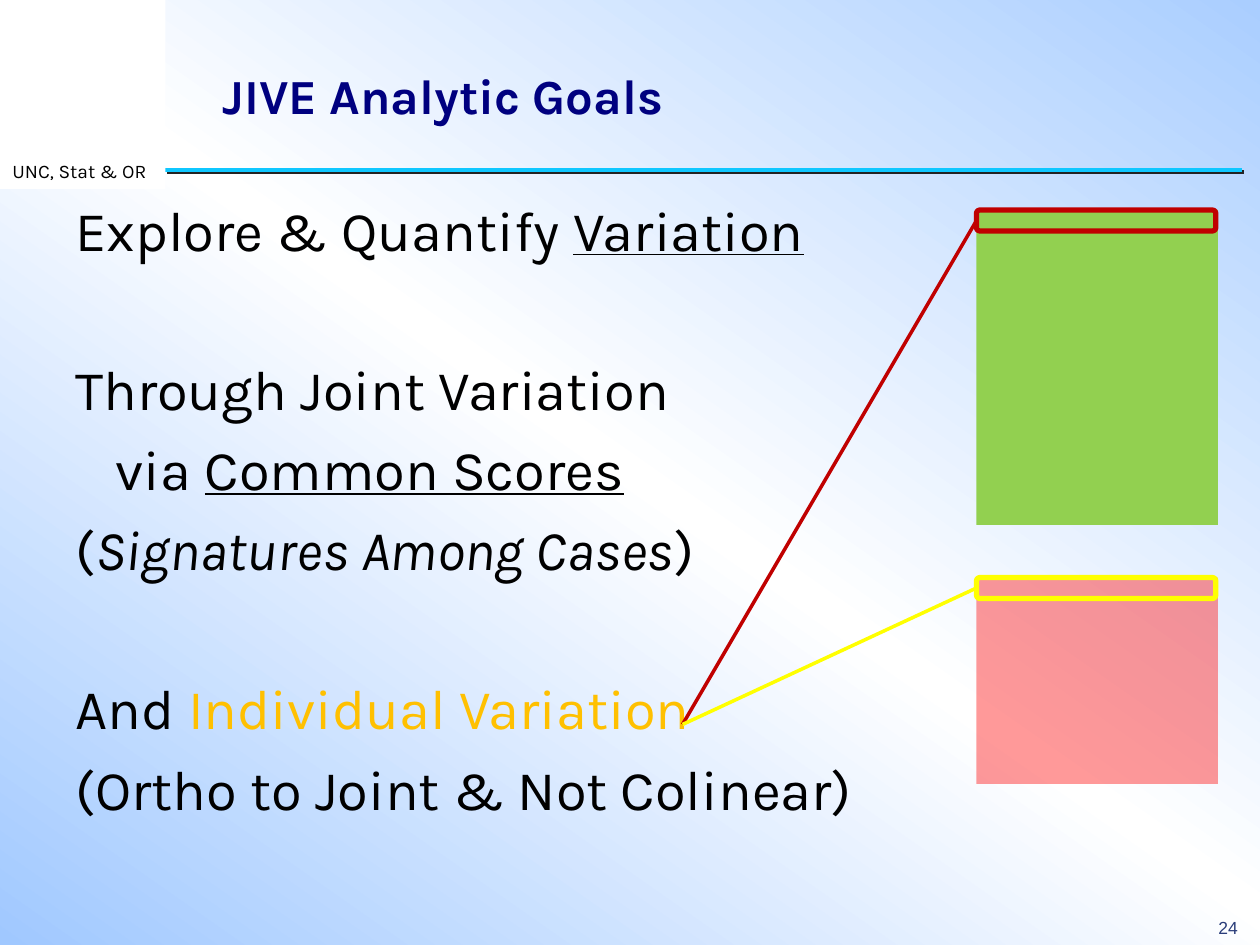
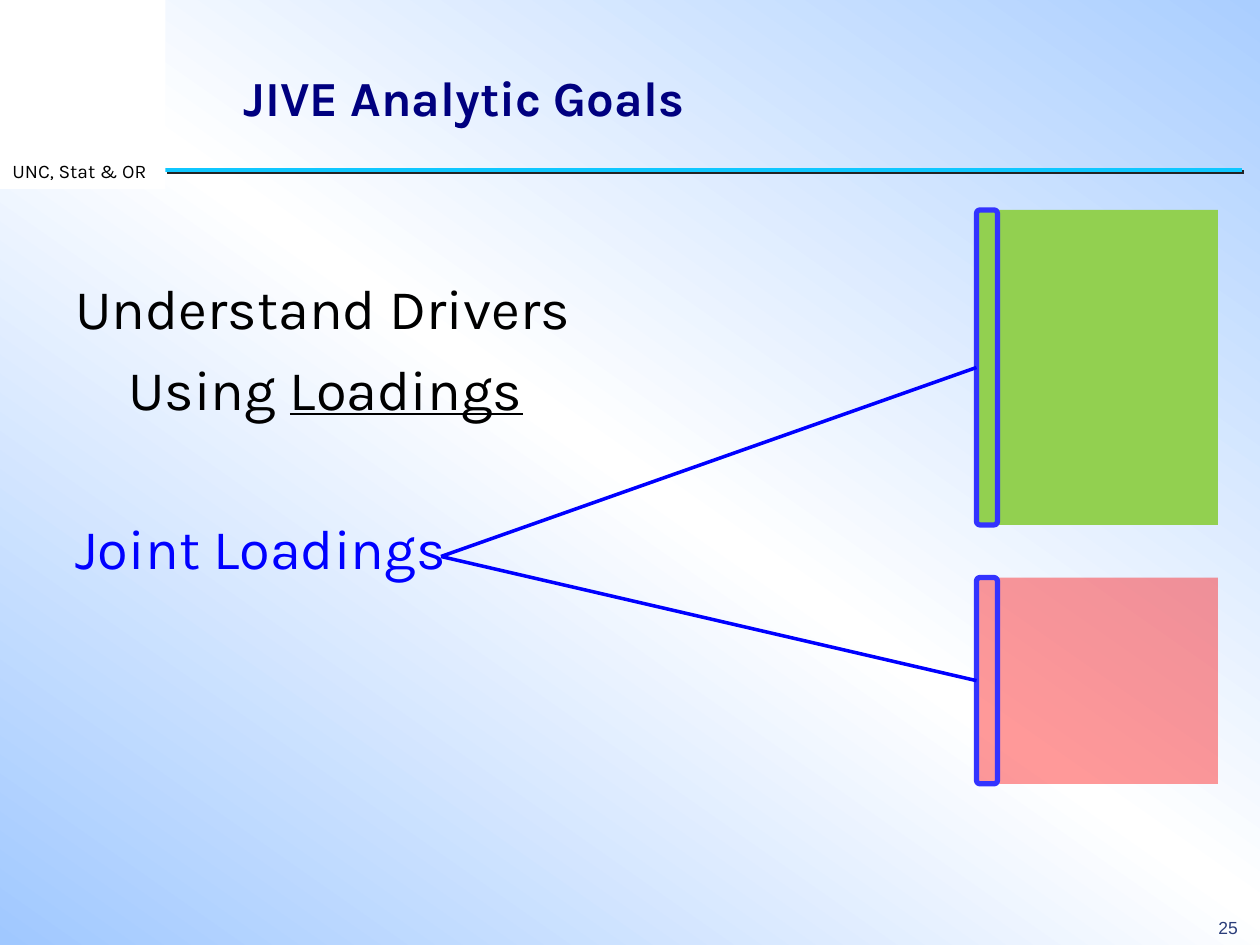
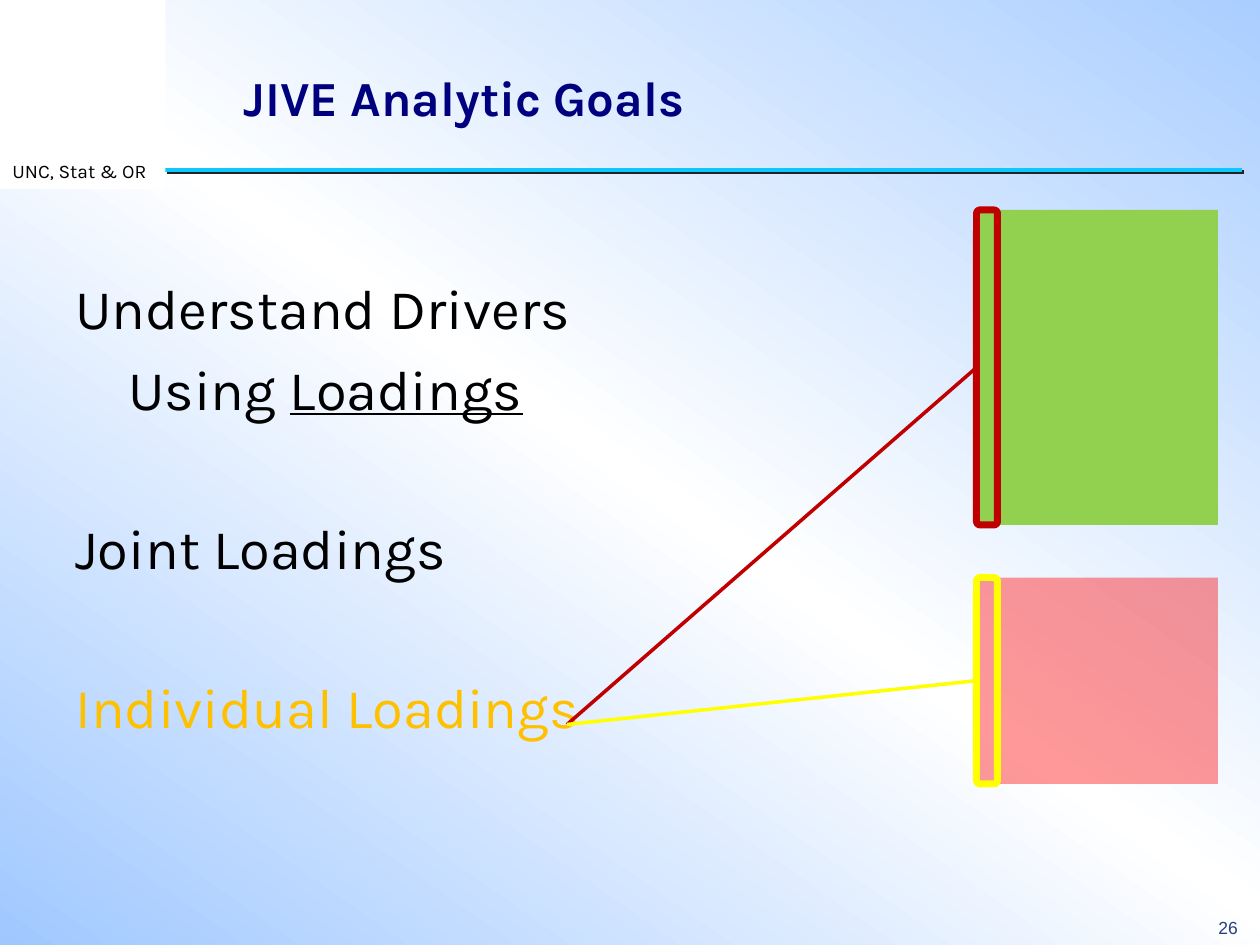
from dataclasses import dataclass

import pptx
import pptx.dml.color
import pptx.enum.shapes
import pptx.enum.text
import pptx.oxml
import pptx.oxml.ns
import pptx.util

RGB = pptx.dml.color.RGBColor
qn = pptx.oxml.ns.qn
SHAPE = pptx.enum.shapes.MSO_SHAPE
ANCHOR = pptx.enum.text.MSO_ANCHOR
ALIGN = pptx.enum.text.PP_ALIGN

BLACK = RGB(0x00, 0x00, 0x00)
WHITE = RGB(0xFF, 0xFF, 0xFF)
NAVY = RGB(0x00, 0x00, 0x7F)
PAGE_BLUE = RGB(0x2A, 0x3D, 0x7A)
RULE_BLUE = RGB(0x0F, 0xC7, 0xFF)
RULE_SHADOW = RGB(0x23, 0x23, 0x23)
GREEN = RGB(0x92, 0xD0, 0x50)
RED = RGB(0xFF, 0x00, 0x00)
DARK_RED = RGB(0xC0, 0x00, 0x00)
YELLOW = RGB(0xFF, 0xFF, 0x00)
AMBER = RGB(0xFF, 0xC0, 0x00)
BLUE = RGB(0x00, 0x00, 0xFF)
TAB_BLUE = RGB(0x33, 0x33, 0xFF)
SKY = RGB(0xA0, 0xC8, 0xFF)
SKY_LIGHT = RGB(0xAA, 0xCE, 0xFF)
BACKGROUND_STOPS = [(0, SKY_LIGHT), (50, WHITE), (100, SKY)]

# The slide is a grid of 120 columns and 90 rows.
COLUMNS, ROWS = 120, 90
SLIDE_WIDTH, SLIDE_HEIGHT = pptx.util.Inches(10), pptx.util.Inches(7.5)
BODY_FONT = "Karla"
BODY_SIZE = 32
LINE_GAP = 7.5
BLANK_LINE = 44.9


@dataclass
class Box:
    left: float
    top: float
    width: float
    height: float

    def emu(self):
        return (*point(self.left, self.top), *point(self.width, self.height))


@dataclass
class Line:
    """A body line; each run is a string or a (string, format values) pair."""
    runs: list
    indent: float = 0
    new_group: bool = False


CORNER = Box(0, 0, 15.75, 18)
PAGE_NUMBER = Box(114.85, 87, 4.4, 3)
FIRST_TITLE = Box(20, 5.75, 93.85, 6.5)
LATER_TITLE = Box(22, 6, 93.85, 6.5)
FIRST_BODY = Box(6, 18, 86, 62)
LATER_BODY = Box(6, 25.5, 86, 54)
MATRICES = Box(93, 20, 23, 54.65)
TAB_DEPTH = 2


def point(column, row):
    return (round(column * SLIDE_WIDTH / COLUMNS),
            round(row * SLIDE_HEIGHT / ROWS))


def set_font(font, color, **values):
    font.color.rgb = color
    for name, value in values.items():
        setattr(font, name, value)


def add_plain_shape(slide, kind, box):
    shape = slide.shapes.add_shape(kind, *box.emu())
    shape.shadow.inherit = False
    return shape


def add_line(slide, start, end, color, weight):
    """Draw a straight line and return it with its empty effect list."""
    line = slide.shapes.add_connector(
        pptx.enum.shapes.MSO_CONNECTOR.STRAIGHT, *point(*start), *point(*end))
    line.line.color.rgb = color
    line.line.width = pptx.util.Pt(weight)
    effects = pptx.oxml.parse_xml(f"<a:effectLst {pptx.oxml.ns.nsdecls('a')}/>")
    line._element.spPr.append(effects)
    return line, effects


def set_background(master):
    fill = master.background.fill
    fill.gradient()
    fill.gradient_angle = 235
    stops = next(master.element.iter(qn("a:gsLst")))
    for stop in list(stops):
        stops.remove(stop)
    for percent, color in BACKGROUND_STOPS:
        stops.append(pptx.oxml.parse_xml(
            f'<a:gs {pptx.oxml.ns.nsdecls("a")} pos="{percent * 1000}">'
            f'<a:srgbClr val="{color}"/></a:gs>'))


def add_frame(slide, number):
    """Add the corner label, the header rule and the page number."""
    rule_row = 0.9 * CORNER.height
    _, effects = add_line(slide, (CORNER.width, rule_row), (118.3, rule_row),
                          RULE_BLUE, 2.25)
    effects.append(pptx.oxml.parse_xml(
        f'<a:outerShdw {pptx.oxml.ns.nsdecls("a")} blurRad="0" dist="17780" '
        f'dir="2700000"><a:srgbClr val="{RULE_SHADOW}"/></a:outerShdw>'))

    corner = add_plain_shape(slide, SHAPE.RECTANGLE, CORNER)
    corner.fill.solid()
    corner.fill.fore_color.rgb = WHITE
    corner.line.fill.background()
    corner.text_frame.vertical_anchor = ANCHOR.BOTTOM
    label = corner.text_frame.paragraphs[0]
    label.text = "UNC, Stat & OR"
    label.alignment = ALIGN.LEFT
    set_font(label.font, BLACK, name=BODY_FONT, size=pptx.util.Pt(11))

    page = slide.shapes.add_textbox(*PAGE_NUMBER.emu()).text_frame.paragraphs[0]
    page.text = str(number)
    page.line_spacing = 0.9
    set_font(page.font, PAGE_BLUE, name="Arial", size=pptx.util.Pt(10))


def set_title(slide, box):
    title = slide.shapes.title
    title.left, title.top, title.width, title.height = box.emu()
    title.text_frame.vertical_anchor = ANCHOR.MIDDLE
    heading = title.text_frame.paragraphs[0]
    heading.text = "JIVE Analytic Goals"
    heading.alignment = ALIGN.LEFT
    set_font(heading.font, NAVY, name=BODY_FONT, size=pptx.util.Pt(28), bold=True)


def add_body(slide, box, lines):
    frame = slide.shapes.add_textbox(*box.emu()).text_frame
    frame.word_wrap = True
    for index, line in enumerate(lines):
        paragraph = frame.add_paragraph() if index else frame.paragraphs[0]
        if line.indent:
            indent = pptx.util.Inches(line.indent)
            paragraph._p.get_or_add_pPr().set("marL", str(indent))
        if index:
            gap = LINE_GAP + (BLANK_LINE if line.new_group else 0)
            paragraph.space_before = pptx.util.Pt(gap)
        for item in line.runs:
            text, values = (item, {}) if isinstance(item, str) else item
            run = paragraph.add_run()
            run.text = text
            set_font(run.font, **{"color": BLACK, "name": BODY_FONT,
                                  "size": pptx.util.Pt(BODY_SIZE), **values})


def add_matrices(slide, box, target, colors, across, tab_weight):
    """Stack two data matrices, outline one row or column of each, and link
    the outlines to the target point in the text."""
    green_block = Box(box.left, box.top, box.width, 30)
    red_block = Box(box.left, box.top + 35, box.width, box.height - 35)
    for block, color, opacity in ((green_block, GREEN, 100), (red_block, RED, 40)):
        matrix = add_plain_shape(slide, SHAPE.RECTANGLE, block)
        matrix.fill.solid()
        matrix.fill.fore_color.rgb = color
        matrix.line.fill.background()
        if opacity < 100:
            rgb = next(matrix._element.spPr.iter(qn("a:srgbClr")))
            alpha = rgb.makeelement(qn("a:alpha"), {"val": str(opacity * 1000)})
            rgb.append(alpha)

    for block, (tab_color, link_color) in zip((green_block, red_block), colors):
        size = (block.width - 0.2, TAB_DEPTH) if across else (TAB_DEPTH, block.height)
        tab = add_plain_shape(slide, SHAPE.ROUNDED_RECTANGLE,
                              Box(block.left, block.top, *size))
        tab.fill.background()
        tab.line.color.rgb = tab_color
        tab.line.width = pptx.util.Pt(tab_weight)
        start = (block.left, block.top + size[1] / 2)
        link, _ = add_line(slide, start, target, link_color, 2)
        link.begin_connect(tab, 1)


def add_goal_slide(deck, number, title_box, body_box, lines, **matrices):
    slide = deck.slides.add_slide(deck.slide_layouts[5])
    add_frame(slide, number)
    set_title(slide, title_box)
    add_body(slide, body_box, lines)
    add_matrices(slide, MATRICES, **matrices)


def main():
    deck = pptx.Presentation()
    deck.slide_width, deck.slide_height = SLIDE_WIDTH, SLIDE_HEIGHT
    set_background(deck.slide_master)

    underlined = {"underline": True}
    individual = [(DARK_RED, DARK_RED), (YELLOW, YELLOW)]
    joint = [(TAB_BLUE, BLUE)] * 2
    variation = [
        Line(["Explore & Quantify ", ("Variation", underlined)]),
        Line(["Through Joint Variation"], new_group=True),
        Line(["via ", ("Common Scores", underlined)], indent=0.32),
        Line(["(", ("Signatures Among Cases", {"italic": True}), ")"]),
        Line(["And ", ("Individual Variation", {"color": AMBER})], new_group=True),
        Line(["(Ortho to Joint & Not Colinear)"]),
    ]
    drivers = [
        Line(["Understand Drivers"]),
        Line(["Using ", ("Loadings", underlined)], indent=0.42),
    ]
    joint_loadings = [Line([("Joint Loadings", {"color": BLUE})], new_group=True)]
    individual_loadings = [
        Line(["Joint Loadings"], new_group=True),
        Line([("Individual Loadings", {"color": AMBER})], new_group=True),
    ]

    add_goal_slide(deck, 24, FIRST_TITLE, FIRST_BODY, variation,
                   target=(65, 69), colors=individual, across=True, tab_weight=3)
    add_goal_slide(deck, 25, LATER_TITLE, LATER_BODY, drivers + joint_loadings,
                   target=(42, 53), colors=joint, across=False, tab_weight=3)
    add_goal_slide(deck, 26, LATER_TITLE, LATER_BODY, drivers + individual_loadings,
                   target=(54, 69), colors=individual, across=False, tab_weight=4)
    deck.save("out.pptx")


if __name__ == "__main__":
    main()
